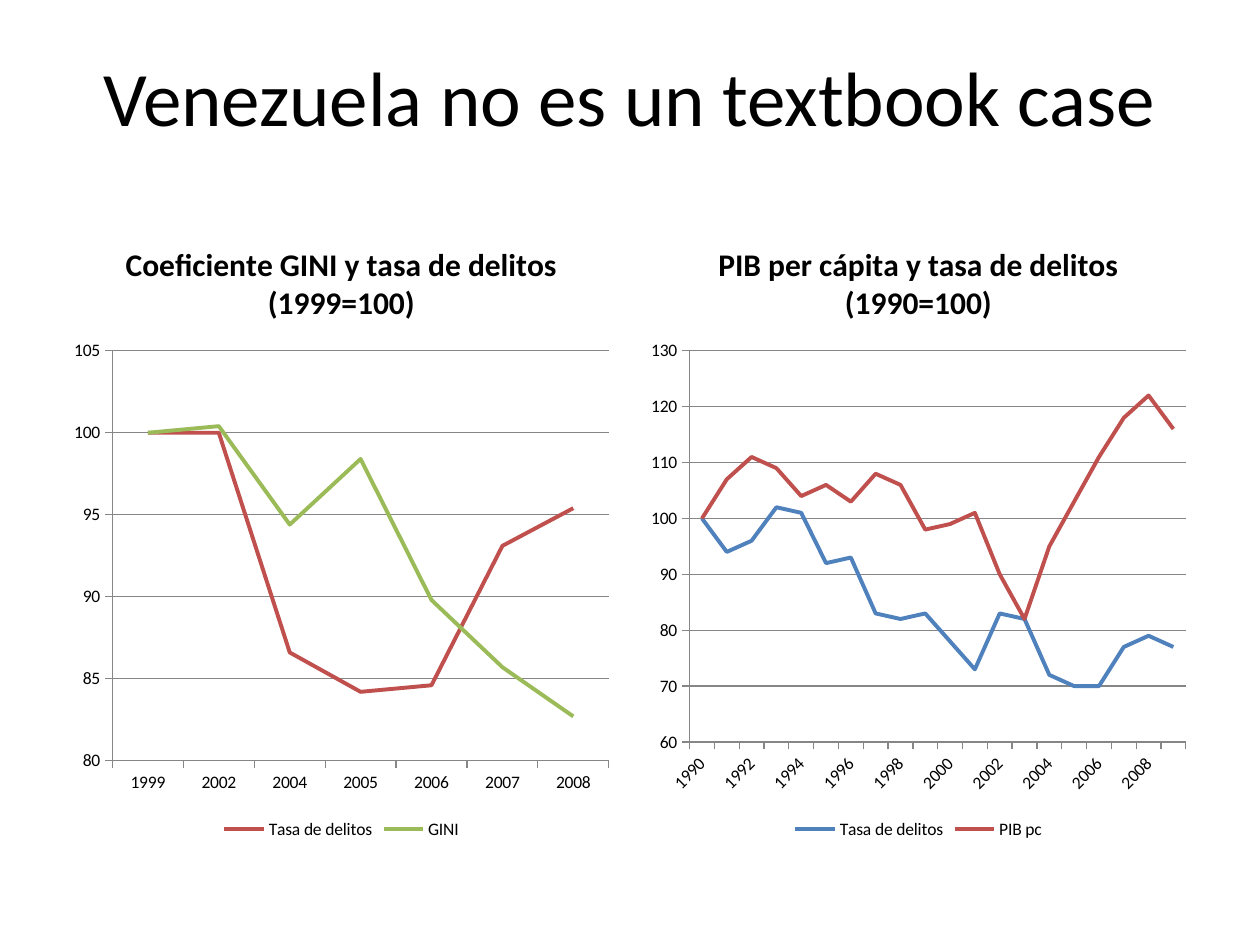
import pptx
import pptx.util
import pptx.dml.color
import pptx.chart.data
import pptx.enum.chart
import pptx.enum.text
import pptx.oxml
from pptx.util import Inches, Pt


def rgb(value):
    return pptx.dml.color.RGBColor.from_string(value)


prs = pptx.Presentation()
prs.slide_width, prs.slide_height = Inches(10), Inches(7.5)
s = prs.slides.add_slide(prs.slide_layouts[5])

title = s.shapes.title
title.left, title.top = Inches(0.5), Inches(0.3)
title.width, title.height = Inches(9), Inches(1.25)
tf = title.text_frame
tf.text = "Venezuela no es un textbook case"
tf.vertical_anchor = pptx.enum.text.MSO_ANCHOR.TOP
tf.margin_top = Inches(0.09)
p = tf.paragraphs[0]
p.alignment = pptx.enum.text.PP_ALIGN.CENTER
p.font.size, p.font.name = Pt(44), "Calibri"
p.font.color.rgb = rgb("000000")

panels = [
    dict(left=0.5, title="Coeficiente GINI y tasa de delitos\n(1999=100)",
         years=[1999, 2002, 2004, 2005, 2006, 2007, 2008],
         low=80, high=105, step=5, skip=1, angle=0,
         series=[("Tasa de delitos", "C0504D",
                  [100, 100, 86.6, 84.2, 84.6, 93.1, 95.4]),
                 ("GINI", "9BBB59",
                  [100, 100.4, 94.4, 98.4, 89.8, 85.7, 82.7])]),
    dict(left=5.08, title="PIB per cápita y tasa de delitos\n(1990=100)",
         years=range(1990, 2010),
         low=60, high=130, step=10, skip=2, angle=-45,
         series=[("Tasa de delitos", "4F81BD",
                  [100, 94, 96, 102, 101, 92, 93, 83, 82, 83,
                   78, 73, 83, 82, 72, 70, 70, 77, 79, 77]),
                 ("PIB pc", "C0504D",
                  [100, 107, 111, 109, 104, 106, 103, 108, 106, 98,
                   99, 101, 90, 82, 95, 103, 111, 118, 122, 116])]),
]

for panel in panels:
    data = pptx.chart.data.CategoryChartData(number_format="General")
    data.categories = [str(year) for year in panel["years"]]
    for name, color, values in panel["series"]:
        data.add_series(name, values)
    chart = s.shapes.add_chart(
        pptx.enum.chart.XL_CHART_TYPE.LINE, Inches(panel["left"]), Inches(1.75),
        Inches(4.42), Inches(4.95), data).chart
    chart.font.size, chart.font.name = Pt(10), "Calibri"
    chart.font.color.rgb = rgb("000000")

    chart.has_title = True
    tf = chart.chart_title.text_frame
    tf.text = panel["title"]
    for p in tf.paragraphs:
        for r in p.runs:
            r.font.size, r.font.bold, r.font.name = Pt(18), True, "Calibri"
            r.font.color.rgb = rgb("000000")
    chart.chart_title.include_in_layout = False

    chart.has_legend = True
    chart.legend.position = pptx.enum.chart.XL_LEGEND_POSITION.BOTTOM
    chart.legend.include_in_layout = False

    val, cat = chart.value_axis, chart.category_axis
    val.minimum_scale, val.maximum_scale = panel["low"], panel["high"]
    val.major_unit = panel["step"]
    val.has_major_gridlines = True
    for axis in (val, cat):
        axis.major_tick_mark = pptx.enum.chart.XL_TICK_MARK.OUTSIDE
        axis.tick_labels.font.size = Pt(10)
    for line in (val.format.line, cat.format.line, val.major_gridlines.format.line):
        line.color.rgb = rgb("868686")
        line.width = Pt(0.75)
    if panel["angle"]:
        body = cat._element.txPr.find(pptx.oxml.ns.qn("a:bodyPr"))
        body.set("rot", str(panel["angle"] * 60000))
        skip = pptx.oxml.parse_xml(
            '<c:tickLblSkip xmlns:c="http://schemas.openxmlformats.org/'
            f'drawingml/2006/chart" val="{panel["skip"]}"/>')
        cat._element.find(pptx.oxml.ns.qn("c:noMultiLvlLbl")).addprevious(skip)

    for ser, (name, color, values) in zip(chart.plots[0].series, panel["series"]):
        ser.smooth = False
        ser.marker.style = pptx.enum.chart.XL_MARKER_STYLE.NONE
        ser.format.line.color.rgb = rgb(color)
        ser.format.line.width = Pt(2.25)
    chart.plots[0].vary_by_categories = False

prs.save("out.pptx")
